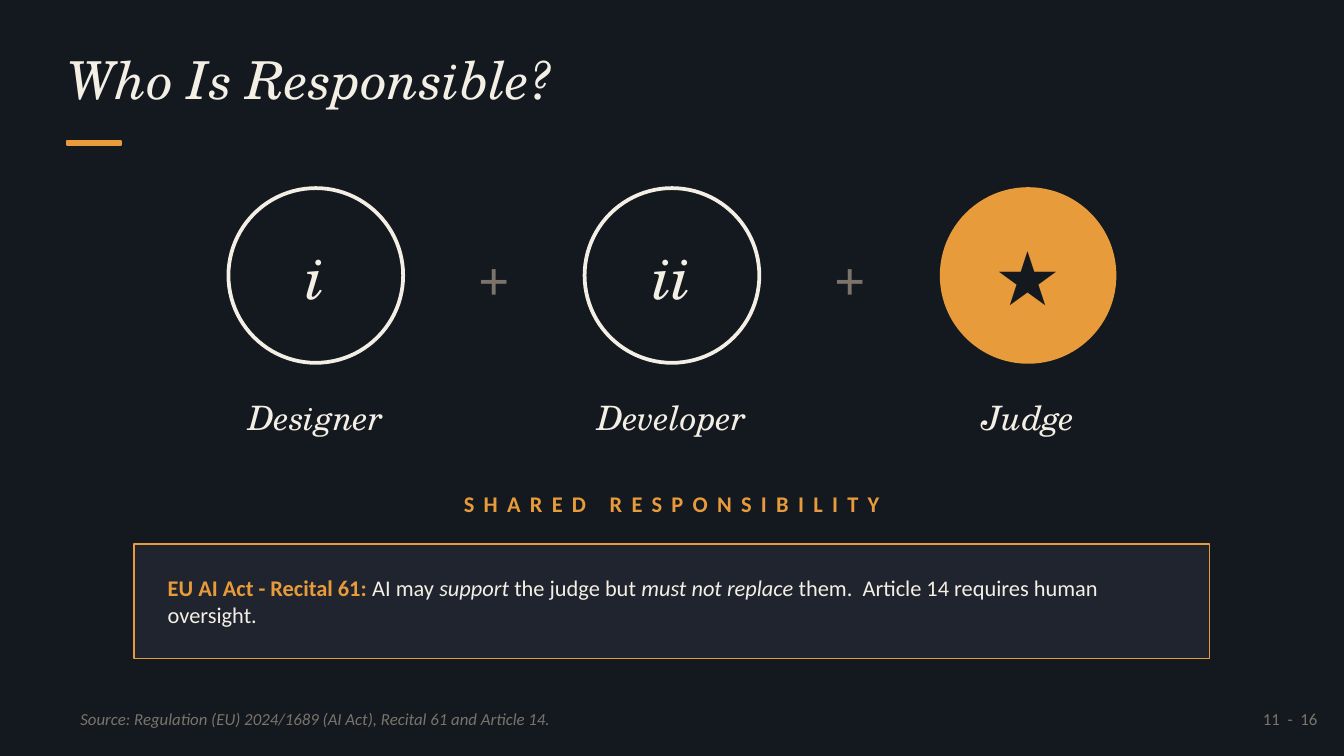
"""Build the "Who Is Responsible?" slide on a grid of 100 columns across the slide."""
from pptx import Presentation
from pptx.dml.color import RGBColor
from pptx.enum.shapes import MSO_SHAPE
from pptx.enum.text import MSO_ANCHOR, PP_ALIGN
from pptx.util import Inches, Pt

RECT, OVAL = MSO_SHAPE.RECTANGLE, MSO_SHAPE.OVAL
LEFT, CENTER, RIGHT = PP_ALIGN.LEFT, PP_ALIGN.CENTER, PP_ALIGN.RIGHT
TOP, MIDDLE = MSO_ANCHOR.TOP, MSO_ANCHOR.MIDDLE

INK = RGBColor(0x14, 0x18, 0x1F)
PANEL = RGBColor(0x1F, 0x24, 0x2E)
CREAM = RGBColor(0xF4, 0xEF, 0xE5)
AMBER = RGBColor(0xE8, 0x9B, 0x3A)
GRAY = RGBColor(0x7A, 0x74, 0x6A)
SERIF, SANS = "TeX Gyre Schola", "Calibri"

prs = Presentation()
prs.slide_width = Inches(10)
prs.slide_height = prs.slide_width * 9 // 16
COL = prs.slide_width / 100
s = prs.slides.add_slide(prs.slide_layouts[6])
s.background.fill.solid()
s.background.fill.fore_color.rgb = INK


def add_shape(kind, *box, fill, line, width=1):
    """Add a preset shape; box is left, top, width, height in grid columns."""
    sp = s.shapes.add_shape(kind, *[round(v * COL) for v in box])
    sp.shadow.inherit = False
    sp.fill.solid()
    sp.fill.fore_color.rgb = fill
    sp.line.color.rgb = line
    sp.line.width = Pt(width)


def add_text(text, *box, size, color, font=SERIF, align=LEFT, anchor=MIDDLE,
             bold=False, italic=False, spacing=None, inset=True):
    """Add a text box; text is a string or a list of (string, format) runs."""
    tf = s.shapes.add_textbox(*[round(v * COL) for v in box]).text_frame
    tf.word_wrap = True
    tf.vertical_anchor = anchor
    if not inset:
        tf.margin_left = tf.margin_top = tf.margin_right = tf.margin_bottom = 0
    p = tf.paragraphs[0]
    p.alignment = align
    for words, look in [(text, {})] if isinstance(text, str) else text:
        r = p.add_run()
        r.text = words
        r.font.name, r.font.size = font, Pt(size)
        r.font.bold = look.get("bold", bold)
        r.font.italic = look.get("italic", italic)
        r.font.color.rgb = look.get("color", color)
        if spacing:
            r.font._element.set("spc", str(spacing * 100))


add_text("Who Is Responsible?", 5, 3.5, 90, 8, size=28, color=CREAM,
         italic=True, anchor=TOP, inset=False)
add_shape(RECT, 5, 10.5, 4, 0.3, fill=AMBER, line=AMBER)

PITCH, CELL, DISC = 26.5, 21, 13
roles = [
    ("i", "Designer", 32, CREAM, INK, CREAM, 2),
    ("ii", "Developer", 32, CREAM, INK, CREAM, 2),
    ("★", "Judge", 40, INK, AMBER, AMBER, 1),
]
for n, (mark, role, size, color, fill, line, width) in enumerate(roles):
    x = 13 + n * PITCH
    disc = x + (CELL - DISC) / 2, 14, DISC, DISC
    add_shape(OVAL, *disc, fill=fill, line=line, width=width)
    add_text(mark, *disc, size=size, color=color, italic=True, align=CENTER)
    add_text(role, x, 28.5, CELL, 5, size=18, color=CREAM, italic=True, align=CENTER)
    if n < len(roles) - 1:
        add_text("+", x + CELL, 17, PITCH - CELL, 7, size=26, color=GRAY, align=CENTER)

add_text("SHARED RESPONSIBILITY", 5, 35.5, 90, 4, size=12, color=AMBER,
         font=SANS, bold=True, align=CENTER, spacing=5)
add_shape(RECT, 10, 40.5, 80, 8.5, fill=PANEL, line=AMBER)
recital = [
    ("EU AI Act - Recital 61: ", {"bold": True, "color": AMBER}),
    ("AI may ", {}),
    ("support", {"italic": True}),
    (" the judge but ", {}),
    ("must not replace", {"italic": True}),
    (" them.  Article 14 requires human oversight.", {}),
]
add_text(recital, 11.5, 41, 77, 7.5, size=12, color=CREAM, font=SANS)

add_text("Source: Regulation (EU) 2024/1689 (AI Act), Recital 61 and Article 14.",
         5, 52, 80, 3, size=9, color=GRAY, font=SANS, italic=True)
add_text("11  -  16", 87, 52, 12, 3, size=9, color=GRAY, font=SANS, align=RIGHT)

prs.save("out.pptx")
